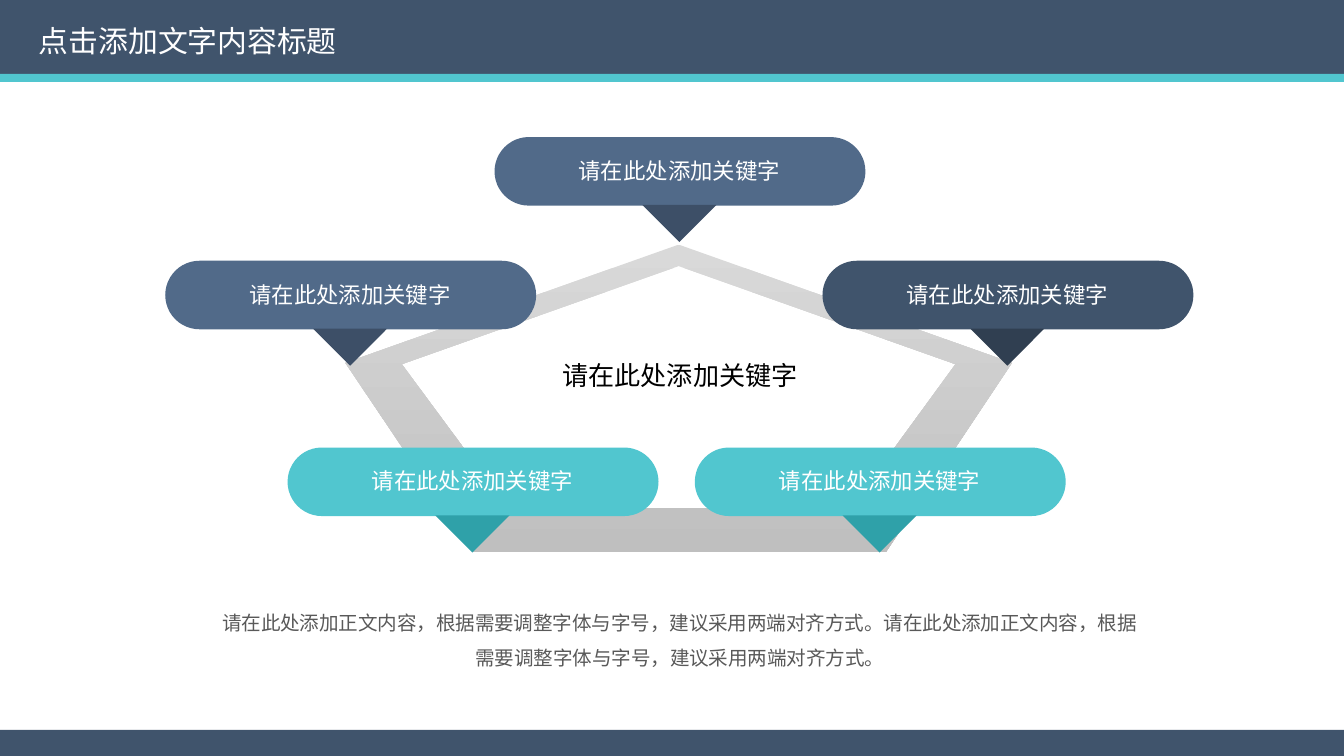
from lxml.etree import SubElement
from pptx import Presentation
from pptx.dml.color import RGBColor
from pptx.enum.shapes import MSO_SHAPE as Kind
from pptx.enum.text import MSO_ANCHOR as Anchor, PP_ALIGN as Align
from pptx.oxml.ns import qn
from pptx.util import Inches, Pt

WIDE = 10
HIGH = WIDE * 9 / 16
FONT = "Noto Sans CJK SC"
NAVY, BLUE, TEAL, WHITE = "40546C", "516A89", "51C6CF", "FFFFFF"
KEY = "请在此处添加关键字"
BODY = "请在此处添加正文内容，根据需要调整字体与字号，建议采用两端对齐方式。" * 2


def color(code):
    return RGBColor.from_string(code)


def block(host, kind, box, fill):
    shape = host.add_shape(kind, *map(Inches, box))
    shape.shadow.inherit = False
    shape.fill.solid()
    shape.fill.fore_color.rgb = color(fill)
    shape.line.fill.background()
    return shape


def label(host, box, text, size, tint, align=Align.CENTER, space=1, wrap=True):
    frame = host.add_textbox(*map(Inches, box)).text_frame
    form = {
        "word_wrap": wrap,
        "vertical_anchor": Anchor.TOP,
        "margin_left": Inches(0.09),
        "margin_right": Inches(0.09),
        "margin_top": Inches(0.05),
        "margin_bottom": Inches(0.05),
    }
    for name, value in form.items():
        setattr(frame, name, value)
    para = frame.paragraphs[0]
    para.alignment = align
    para.line_spacing = space
    run = para.add_run()
    run.text = text
    for name, value in {"name": FONT, "size": Pt(size)}.items():
        setattr(run.font, name, value)
    run.font.color.rgb = color(tint)
    # East Asian glyphs take their own typeface
    SubElement(run.font._element, qn("a:ea")).set("typeface", FONT)


def bars(host):
    """Header band with its accent line, and the footer band."""
    block(host, Kind.RECTANGLE, (0, 0, WIDE, 0.55), NAVY)
    block(host, Kind.RECTANGLE, (0, 0.55, WIDE, 0.06), TEAL)
    block(host, Kind.RECTANGLE, (0, 5.43, WIDE, 0.21), NAVY)


def ring(host, left, top):
    """Grey pentagon with a pentagon hole."""
    hole = [(2.48, 0.16), (0.42, 0.89), (1.21, 1.96), (3.76, 1.96), (4.54, 0.89)]
    edge = [(2.48, 0), (4.96, 0.88), (4.02, 2.29), (0.95, 2.29), (0, 0.88)]
    inner, outer = [
        [(Inches(left + x), Inches(top + y)) for x, y in path] for path in (hole, edge)
    ]
    pen = host.build_freeform(*inner[0])
    pen.add_line_segments(inner[1:], close=True)
    pen.move_to(*outer[0])
    pen.add_line_segments(outer[1:], close=True)
    shape = pen.convert_to_shape()
    shape.shadow.inherit = False
    shape.line.fill.background()
    shape.fill.gradient()
    shape.fill.gradient_angle = 270
    for stop, (place, code) in zip(
        shape.fill.gradient_stops, [(0, "D9D9D9"), (1, "BFBFBF")]
    ):
        stop.position = place
        stop.color.rgb = color(code)


def pill(host, left, top, fill, shade):
    """Rounded tag with a pointer below and a keyword."""
    group = host.add_group_shape().shapes
    tag = block(group, Kind.ROUNDED_RECTANGLE, (left, top, 2.76, 0.51), fill)
    tag.adjustments[0] = 0.5
    tip = block(group, Kind.RIGHT_TRIANGLE, (left + 1.18, top + 0.31, 0.39, 0.39), shade)
    tip.rotation = 315
    label(group, (left + 0.15, top + 0.1, 2.45, 0.3), KEY, 12, WHITE)


def main():
    deck = Presentation()
    deck.slide_width, deck.slide_height = Inches(WIDE), Inches(HIGH)
    host = deck.slides.add_slide(deck.slide_layouts[6]).shapes

    bars(host)
    ring(host, 2.57, 1.82)

    # Tags at the five corners
    for left, top, fill, shade in [
        (6.12, 1.94, NAVY, "303F51"),
        (1.23, 1.94, BLUE, "3D4F67"),
        (5.17, 3.33, TEAL, "2FA1A9"),
        (2.14, 3.33, TEAL, "2FA1A9"),
        (3.68, 1.02, BLUE, "3D4F67"),
    ]:
        pill(host, left, top, fill, shade)

    # Centre keyword, body text and title
    label(host, (3.95, 2.51, 2.22, 0.45), KEY, 14, "000000", space=1.5)
    label(host, (1.52, 4.41, 7.08, 0.63), BODY, 10.5, "595959", space=1.5)
    label(host, (0.2, 0.12, 2.45, 0.37), "点击添加文字内容标题", 16, WHITE,
          align=Align.LEFT, wrap=False)

    deck.save("out.pptx")


if __name__ == "__main__":
    main()
